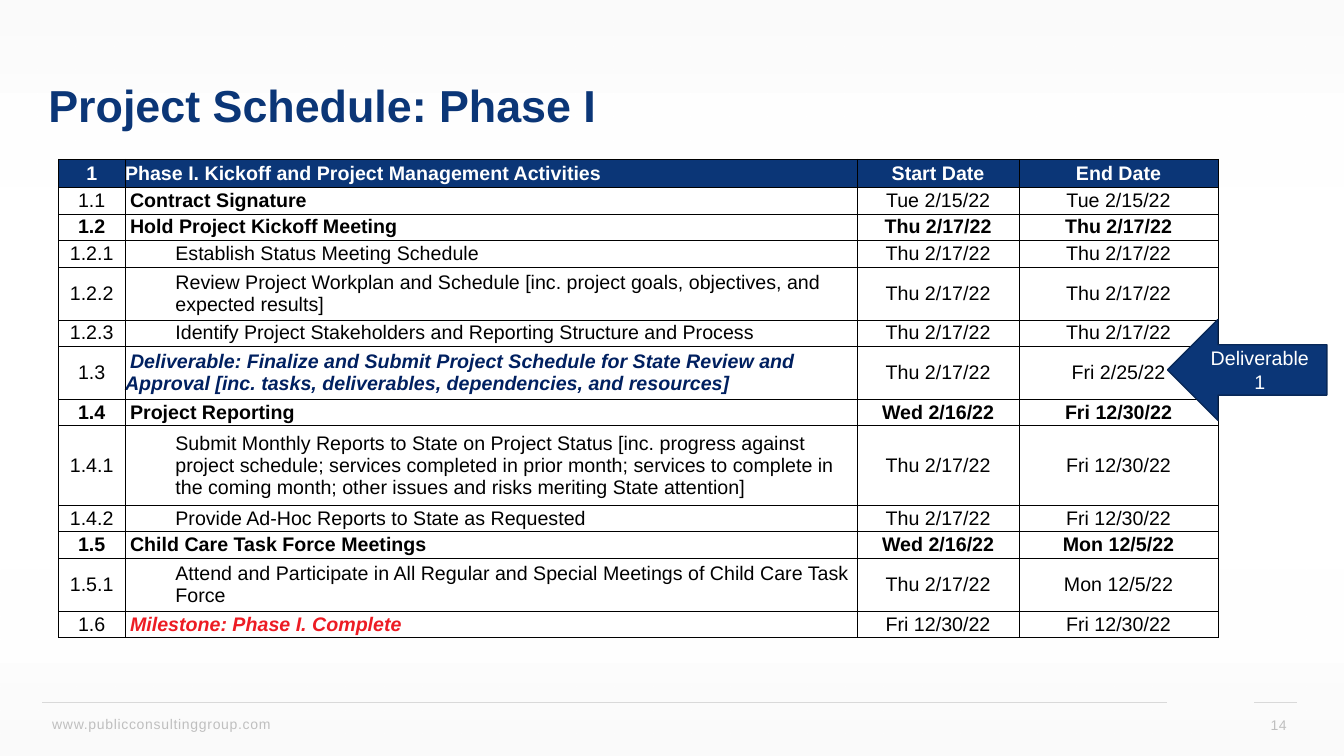
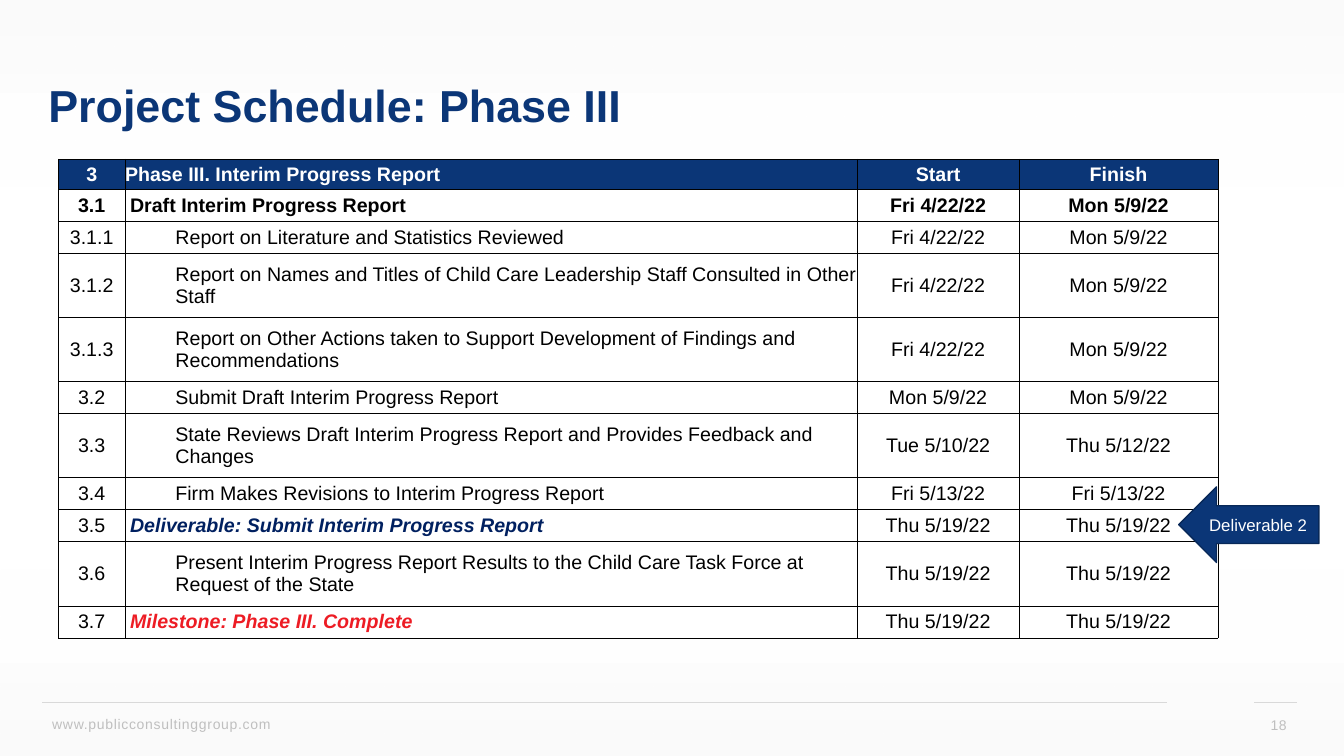
from dataclasses import dataclass

from lxml import etree
from pptx import Presentation
from pptx.dml.color import RGBColor
from pptx.enum.shapes import MSO_CONNECTOR, MSO_SHAPE
from pptx.enum.text import MSO_ANCHOR, MSO_AUTO_SIZE, PP_ALIGN
from pptx.oxml.ns import qn
from pptx.util import Inches, Pt

RECTANGLE, LEFT_ARROW = MSO_SHAPE.RECTANGLE, MSO_SHAPE.LEFT_ARROW
STRAIGHT = MSO_CONNECTOR.STRAIGHT
LEFT, CENTER, RIGHT = PP_ALIGN.LEFT, PP_ALIGN.CENTER, PP_ALIGN.RIGHT
TOP, MIDDLE = MSO_ANCHOR.TOP, MSO_ANCHOR.MIDDLE
NO_AUTOFIT = MSO_AUTO_SIZE.NONE
TITLE_ONLY = 5


@dataclass(frozen=True)
class Theme:
    font: str = "Arial"
    navy: str = "0B3677"
    navy_edge: str = "082858"
    deliverable: str = "002060"
    milestone: str = "ED1C24"
    black: str = "000000"
    white: str = "FFFFFF"
    band: str = "FBFBFB"
    rule: str = "D9D9D9"
    footer: str = "BFBFBF"
    title_size: int = 32
    table_size: int = 14
    footer_size: int = 10


THEME = Theme()
SLIDE_WIDTH, SLIDE_HEIGHT = 13.33, 7.5
BAND_HEIGHT = 1.85
RULE_Y = 6.97
TABLE_LEFT, TABLE_TOP, TABLE_HEIGHT = 0.58, 1.58, 4.75
COLUMN_WIDTHS = (0.66, 7.26, 1.61, 1.97)
FIRST_LINE_INDENT, SUBTASK_INDENT = 0.05, 0.5

# Row kind: (label colour, label bold, label italic, other cells bold)
ROW_STYLES = {
    "header": (THEME.white, True, False, True),
    "group": (THEME.black, True, False, True),
    "task": (THEME.black, True, False, False),
    "subtask": (THEME.black, False, False, False),
    "deliverable": (THEME.deliverable, True, True, False),
    "milestone": (THEME.milestone, True, True, False),
}

# Each row: kind, lines of text, number, activity, start, end
PHASE_ONE = [
    ("header", 1, "1", "Phase I. Kickoff and Project Management Activities", "Start Date", "End Date"),
    ("task", 1, "1.1", "Contract Signature", "Tue 2/15/22", "Tue 2/15/22"),
    ("group", 1, "1.2", "Hold Project Kickoff Meeting", "Thu 2/17/22", "Thu 2/17/22"),
    ("subtask", 1, "1.2.1", "Establish Status Meeting Schedule", "Thu 2/17/22", "Thu 2/17/22"),
    ("subtask", 2, "1.2.2", "Review Project Workplan and Schedule [inc. project goals, objectives, "
     "and expected results]", "Thu 2/17/22", "Thu 2/17/22"),
    ("subtask", 1, "1.2.3", "Identify Project Stakeholders and Reporting Structure and Process",
     "Thu 2/17/22", "Thu 2/17/22"),
    ("deliverable", 2, "1.3", "Deliverable: Finalize and Submit Project Schedule for State Review and "
     "Approval [inc. tasks, deliverables, dependencies, and resources]", "Thu 2/17/22", "Fri 2/25/22"),
    ("group", 1, "1.4", "Project Reporting", "Wed 2/16/22", "Fri 12/30/22"),
    ("subtask", 3, "1.4.1", "Submit Monthly Reports to State on Project Status [inc. progress against "
     "project schedule; services completed in prior month; services to complete in the coming month; "
     "other issues and risks meriting State attention]", "Thu 2/17/22", "Fri 12/30/22"),
    ("subtask", 1, "1.4.2", "Provide Ad-Hoc Reports to State as Requested", "Thu 2/17/22", "Fri 12/30/22"),
    ("group", 1, "1.5", "Child Care Task Force Meetings", "Wed 2/16/22", "Mon 12/5/22"),
    ("subtask", 2, "1.5.1", "Attend and Participate in All Regular and Special Meetings of Child Care "
     "Task Force", "Thu 2/17/22", "Mon 12/5/22"),
    ("milestone", 1, "1.6", "Milestone: Phase I. Complete", "Fri 12/30/22", "Fri 12/30/22"),
]
PHASE_THREE = [
    ("header", 1, "3", "Phase III. Interim Progress Report", "Start", "Finish"),
    ("group", 1, "3.1", "Draft Interim Progress Report", "Fri 4/22/22", "Mon 5/9/22"),
    ("subtask", 1, "3.1.1", "Report on Literature and Statistics Reviewed", "Fri 4/22/22", "Mon 5/9/22"),
    ("subtask", 2, "3.1.2", "Report on Names and Titles of Child Care Leadership Staff Consulted in "
     "Other Staff", "Fri 4/22/22", "Mon 5/9/22"),
    ("subtask", 2, "3.1.3", "Report on Other Actions taken to Support Development of Findings and "
     "Recommendations", "Fri 4/22/22", "Mon 5/9/22"),
    ("subtask", 1, "3.2", "Submit Draft Interim Progress Report", "Mon 5/9/22", "Mon 5/9/22"),
    ("subtask", 2, "3.3", "State Reviews Draft Interim Progress Report and Provides Feedback and "
     "Changes", "Tue 5/10/22", "Thu 5/12/22"),
    ("subtask", 1, "3.4", "Firm Makes Revisions to Interim Progress Report", "Fri 5/13/22", "Fri 5/13/22"),
    ("deliverable", 1, "3.5", "Deliverable: Submit Interim Progress Report", "Thu 5/19/22", "Thu 5/19/22"),
    ("subtask", 2, "3.6", "Present Interim Progress Report Results to the Child Care Task Force at "
     "Request of the State", "Thu 5/19/22", "Thu 5/19/22"),
    ("milestone", 1, "3.7", "Milestone: Phase III. Complete", "Thu 5/19/22", "Thu 5/19/22"),
]


def rgb(code):
    return RGBColor.from_string(code)


def inches(*lengths):
    return [Inches(length) for length in lengths]


def format_paragraph(paragraph, size, color, align=LEFT, bold=False, italic=False):
    paragraph.alignment = align
    font = paragraph.font
    font.name, font.size = THEME.font, Pt(size)
    font.bold, font.italic = bold, italic
    font.color.rgb = rgb(color)


def add_band(slide, top, rotation):
    """Pale gradient that fades from the slide's edge towards its middle."""
    band = slide.shapes.add_shape(RECTANGLE, *inches(0, top, SLIDE_WIDTH, BAND_HEIGHT))
    band.rotation = rotation
    band.shadow.inherit = False
    band.line.fill.background()
    band.fill.gradient()
    band.fill.gradient_angle = 270
    for stop, color in zip(band.fill.gradient_stops, (THEME.band, THEME.white)):
        stop.color.rgb = rgb(color)
    inner_color = list(band.element.iter(qn("a:srgbClr")))[-1]
    etree.SubElement(inner_color, qn("a:alpha"), val="0")
    return band


def add_rule(slide, start, end):
    rule = slide.shapes.add_connector(STRAIGHT, *inches(start, RULE_Y, end, RULE_Y))
    rule.line.color.rgb = rgb(THEME.rule)
    rule.line.width = Pt(0.5)
    etree.SubElement(rule.element.find(qn("p:spPr")), qn("a:effectLst"))
    return rule


def add_footer_text(slide, text, box, align, anchor):
    footer = slide.shapes.add_textbox(*inches(*box))
    frame = footer.text_frame
    frame.word_wrap = True
    frame.vertical_anchor = anchor
    frame.text = text
    format_paragraph(frame.paragraphs[0], THEME.footer_size, THEME.footer, align)
    for properties in footer.element.iter(qn("a:defRPr")):
        properties.set("spc", "50")
    return footer


def prepare_layout(layout):
    """Place the title and drop the layout's unused footer placeholders."""
    for placeholder in list(layout.placeholders):
        if placeholder.placeholder_format.idx:
            placeholder.element.getparent().remove(placeholder.element)
        else:
            (placeholder.left, placeholder.top,
             placeholder.width, placeholder.height) = inches(0.38, 0.4, 12.52, 1.35)


def add_layout_decoration(layout, slide):
    """Draw the bands, rules and web address, then move them to the layout."""
    decoration = [
        add_band(slide, 0, 0),
        add_band(slide, SLIDE_HEIGHT - BAND_HEIGHT, 180),
        add_footer_text(slide, "www.publicconsultinggroup.com", (0.42, 7.05, 3.87, 0.28), LEFT, TOP),
        add_rule(slide, 0.42, 11.57),
        add_rule(slide, 12.44, 12.86),
    ]
    for part in decoration:
        layout.shapes.element.append(part.element)


def set_title(slide, text):
    frame = slide.shapes.title.text_frame
    frame.text = text
    frame.vertical_anchor = MIDDLE
    frame.auto_size = NO_AUTOFIT
    heading = frame.paragraphs[0]
    heading.line_spacing = 0.9
    format_paragraph(heading, THEME.title_size, THEME.navy, bold=True)


def add_cell_borders(cell):
    properties = cell._tc.get_or_add_tcPr()
    for side in ("a:lnL", "a:lnR", "a:lnT", "a:lnB"):
        border = etree.SubElement(properties, qn(side), w=str(Pt(0.5)))
        fill = etree.SubElement(border, qn("a:solidFill"))
        etree.SubElement(fill, qn("a:srgbClr"), val=THEME.black)


def fill_cell(cell, text, kind, is_label):
    label_color, label_bold, label_italic, others_bold = ROW_STYLES[kind]
    is_header = kind == "header"
    add_cell_borders(cell)
    cell.fill.solid()
    cell.fill.fore_color.rgb = rgb(THEME.navy if is_header else THEME.white)
    cell.margin_left = cell.margin_right = cell.margin_top = cell.margin_bottom = 0
    cell.vertical_anchor = MIDDLE
    cell.text = text
    paragraph = cell.text_frame.paragraphs[0]
    if is_label:
        format_paragraph(paragraph, THEME.table_size, label_color, LEFT, label_bold, label_italic)
        indents = paragraph._p.get_or_add_pPr()
        if kind == "subtask":
            indents.set("marL", str(Inches(SUBTASK_INDENT)))
        elif not is_header:
            indents.set("indent", str(Inches(FIRST_LINE_INDENT)))
    else:
        color = THEME.white if is_header else THEME.black
        format_paragraph(paragraph, THEME.table_size, color, CENTER, others_bold)


def add_schedule(slide, rows, header_height):
    """Table whose rows share the height below the header by lines of text."""
    table = slide.shapes.add_table(
        len(rows), len(COLUMN_WIDTHS),
        *inches(TABLE_LEFT, TABLE_TOP, sum(COLUMN_WIDTHS), TABLE_HEIGHT)).table
    table.first_row = table.horz_banding = False
    for column, width in zip(table.columns, COLUMN_WIDTHS):
        column.width = Inches(width)
    line_height = (TABLE_HEIGHT - header_height) / sum(lines for _, lines, *_ in rows[1:])
    for table_row, (kind, lines, *texts) in zip(table.rows, rows):
        table_row.height = Inches(header_height if kind == "header" else lines * line_height)
        for column_index, (cell, text) in enumerate(zip(table_row.cells, texts)):
            fill_cell(cell, text, kind, is_label=column_index == 1)


def add_deliverable_arrow(slide, text, box, size):
    arrow = slide.shapes.add_shape(LEFT_ARROW, *inches(*box))
    arrow.shadow.inherit = False
    arrow.fill.solid()
    arrow.fill.fore_color.rgb = rgb(THEME.navy)
    arrow.line.color.rgb = rgb(THEME.navy_edge)
    arrow.line.width = Pt(1)
    frame = arrow.text_frame
    frame.text = text
    frame.vertical_anchor = MIDDLE
    format_paragraph(frame.paragraphs[0], size, THEME.white, CENTER)


def add_phase_slide(prs, layout, title, page, rows, header_height, arrow):
    slide = prs.slides.add_slide(layout)
    set_title(slide, title)
    add_schedule(slide, rows, header_height)
    add_footer_text(slide, page, (12.44, 6.99, 0.42, 0.4), RIGHT, MIDDLE)
    add_deliverable_arrow(slide, *arrow)
    return slide


def main():
    prs = Presentation()
    prs.slide_width, prs.slide_height = inches(SLIDE_WIDTH, SLIDE_HEIGHT)
    layout = prs.slide_layouts[TITLE_ONLY]
    prepare_layout(layout)
    first_slide = add_phase_slide(
        prs, layout, "Project Schedule: Phase I", "14", PHASE_ONE, 0.28,
        ("Deliverable 1", (11.58, 3.17, 1.58, 1), 14))
    add_layout_decoration(layout, first_slide)
    add_phase_slide(
        prs, layout, "Project Schedule: Phase III", "18", PHASE_THREE, 0.3,
        ("Deliverable 2", (11.69, 4.83, 1.39, 0.75), 12))
    prs.save("out.pptx")


if __name__ == "__main__":
    main()
